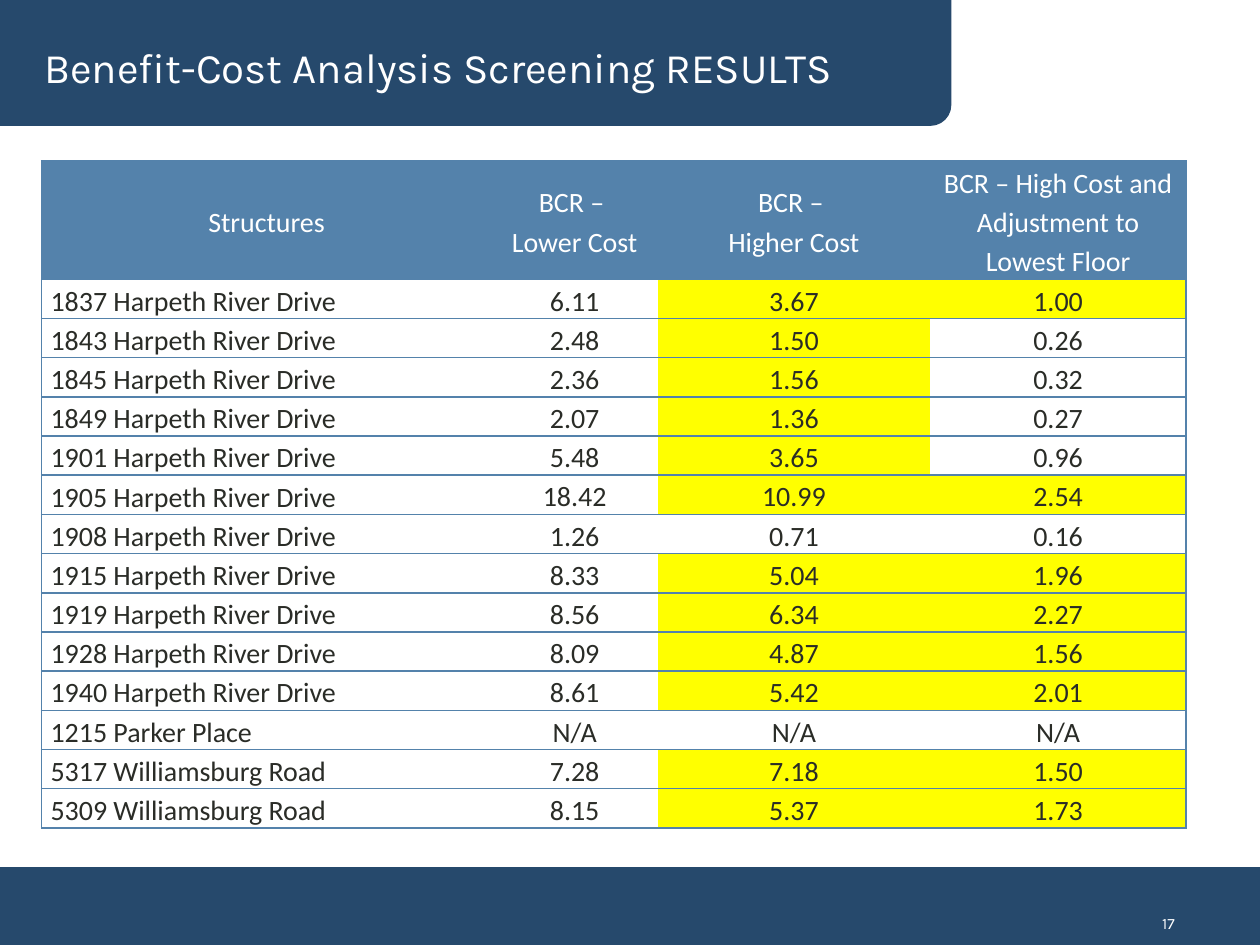
from lxml.etree import SubElement
from pptx import Presentation
from pptx.dml.color import RGBColor
from pptx.enum.shapes import MSO_SHAPE
from pptx.enum.text import MSO_ANCHOR, PP_ALIGN
from pptx.oxml.ns import qn
from pptx.util import Cm, Pt

NAVY, BLUE, YELLOW, WHITE, INK = "26496C", "5482AB", "FFFF00", "FFFFFF", "2A2C27"
NO_STYLE = "{2D5ABB26-0587-4C30-8999-92F81FD0307C}"

HEADINGS = ["Structures", "BCR – \vLower Cost", "BCR – \vHigher Cost",
            "BCR – High Cost and Adjustment to Lowest Floor"]
RESULTS = [
    ("1837 Harpeth River Drive", "6.11", "3.67", "1.00"),
    ("1843 Harpeth River Drive", "2.48", "1.50", "0.26"),
    ("1845 Harpeth River Drive", "2.36", "1.56", "0.32"),
    ("1849 Harpeth River Drive", "2.07", "1.36", "0.27"),
    ("1901 Harpeth River Drive", "5.48", "3.65", "0.96"),
    ("1905 Harpeth River Drive", "18.42", "10.99", "2.54"),
    ("1908 Harpeth River Drive", "1.26", "0.71", "0.16"),
    ("1915 Harpeth River Drive", "8.33", "5.04", "1.96"),
    ("1919 Harpeth River Drive", "8.56", "6.34", "2.27"),
    ("1928 Harpeth River Drive", "8.09", "4.87", "1.56"),
    ("1940 Harpeth River Drive", "8.61", "5.42", "2.01"),
    ("1215 Parker Place", "N/A", "N/A", "N/A"),
    ("5317 Williamsburg Road", "7.28", "7.18", "1.50"),
    ("5309 Williamsburg Road", "8.15", "5.37", "1.73"),
]
COL_WIDTHS = [9.07, 3.35, 5.49, 5.16]
HEADER_HEIGHT, ROW_HEIGHT = 2.38, 0.79


def rgb(color):
    return RGBColor.from_string(color)


def format_text(tf, font, size, color, align):
    for p in tf.paragraphs:
        p.alignment = align
        for r in p.runs:
            r.font.name, r.font.size = font, Pt(size)
            r.font.color.rgb = rgb(color)


def add_band(s, preset, left, top, width, height):
    sp = s.shapes.add_shape(preset, Cm(left), Cm(top), Cm(width), Cm(height))
    sp.shadow.inherit = False
    sp.fill.solid()
    sp.fill.fore_color.rgb = rgb(NAVY)
    sp.line.fill.background()
    return sp


def add_header(s, left, top, width, height):
    band = add_band(s, MSO_SHAPE.ROUND_1_RECTANGLE, left, top, width, height)
    band._element.spPr.find(qn("a:xfrm")).set("flipV", "1")
    title = s.shapes.title
    s.shapes._spTree.append(title._element)  # in front of the band
    title.left, title.top = Cm(left + 0.64), Cm(top + 0.2)
    title.width, title.height = Cm(20.12), Cm(1.78)
    tf = title.text_frame
    tf.text = "Benefit-Cost Analysis Screening RESULTS"
    tf.vertical_anchor = MSO_ANCHOR.BOTTOM
    format_text(tf, "Karla", 24, WHITE, PP_ALIGN.LEFT)


def add_footer(s, left, top, width, height):
    add_band(s, MSO_SHAPE.RECTANGLE, left, top, width, height)
    box = s.shapes.add_textbox(Cm(left + 18.21), Cm(top + 0.71), Cm(5.72), Cm(0.86))
    tf = box.text_frame
    tf.word_wrap = True
    tf.text = "17"
    tf.vertical_anchor = MSO_ANCHOR.MIDDLE
    format_text(tf, "Karla", 9, WHITE, PP_ALIGN.RIGHT)


def set_borders(cell, sides):
    """Draw the given sides (of L, R, T, B, in that order); call before filling."""
    tcPr = cell._tc.get_or_add_tcPr()
    for side in sides:
        ln = SubElement(tcPr, qn(f"a:ln{side}"), w=str(Pt(1)))
        fill = SubElement(ln, qn("a:solidFill"))
        SubElement(fill, qn("a:srgbClr"), val=BLUE)


def cell_fill(row, col, text):
    """Highlight the higher-cost ratios that reach 1."""
    if row == 0:
        return BLUE
    if col < 2:
        return WHITE
    return YELLOW if text != "N/A" and float(text) >= 1 else None


def format_cell(cell, row, col, text):
    cell.text = text
    cell.margin_left = cell.margin_right = Cm(0.18)
    cell.margin_top = cell.margin_bottom = 0
    if row == 0:
        cell.vertical_anchor = MSO_ANCHOR.MIDDLE
    else:
        cell.vertical_anchor = MSO_ANCHOR.BOTTOM if col else MSO_ANCHOR.TOP
    centred = row == 0 or col > 0
    format_text(cell.text_frame, "Calibri", 16, INK if row else WHITE,
                PP_ALIGN.CENTER if centred else PP_ALIGN.LEFT)
    cell.text_frame.paragraphs[0].line_spacing = 1.15
    set_borders(cell, {0: "LTB", len(HEADINGS) - 1: "RTB"}.get(col, "TB"))
    color = cell_fill(row, col, text)
    if color:
        cell.fill.solid()
        cell.fill.fore_color.rgb = rgb(color)
    else:
        cell.fill.background()


def add_results_table(s, left, top):
    rows = [HEADINGS, *RESULTS]
    height = HEADER_HEIGHT + ROW_HEIGHT * len(RESULTS)
    table = s.shapes.add_table(len(rows), len(HEADINGS), Cm(left), Cm(top),
                               Cm(sum(COL_WIDTHS)), Cm(height)).table
    table.first_row = table.horz_banding = False
    table._tbl.tblPr.find(qn("a:tableStyleId")).text = NO_STYLE
    for column, width in zip(table.columns, COL_WIDTHS):
        column.width = Cm(width)
    for i, values in enumerate(rows):
        table.rows[i].height = Cm(ROW_HEIGHT if i else HEADER_HEIGHT)
        for j, text in enumerate(values):
            format_cell(table.cell(i, j), i, j, text)


def main():
    prs = Presentation()
    prs.slide_width, prs.slide_height = Cm(25.4), Cm(19.05)
    s = prs.slides.add_slide(prs.slide_layouts[5])
    add_header(s, 0, 0, 19.18, 2.54)
    add_footer(s, 0, 17.48, 25.4, 1.78)
    add_results_table(s, 0.84, 3.25)
    prs.save("out.pptx")


if __name__ == "__main__":
    main()
